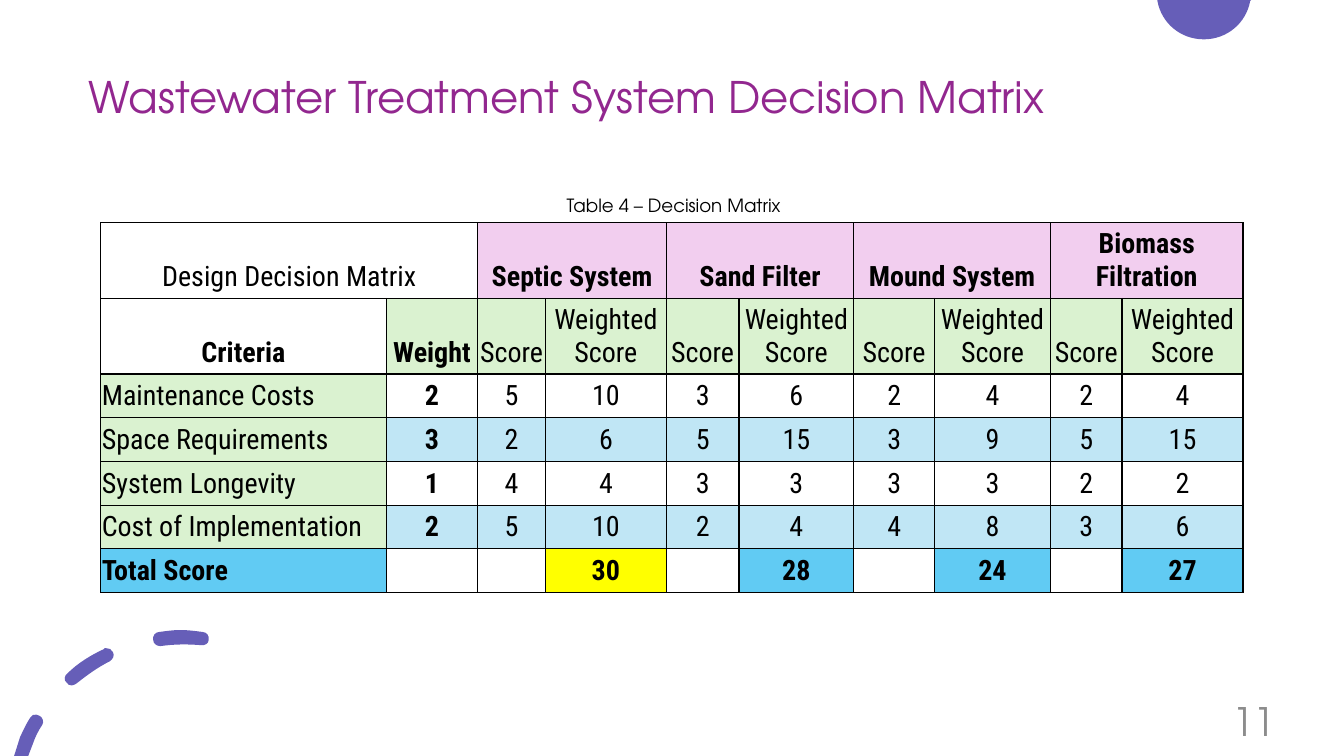
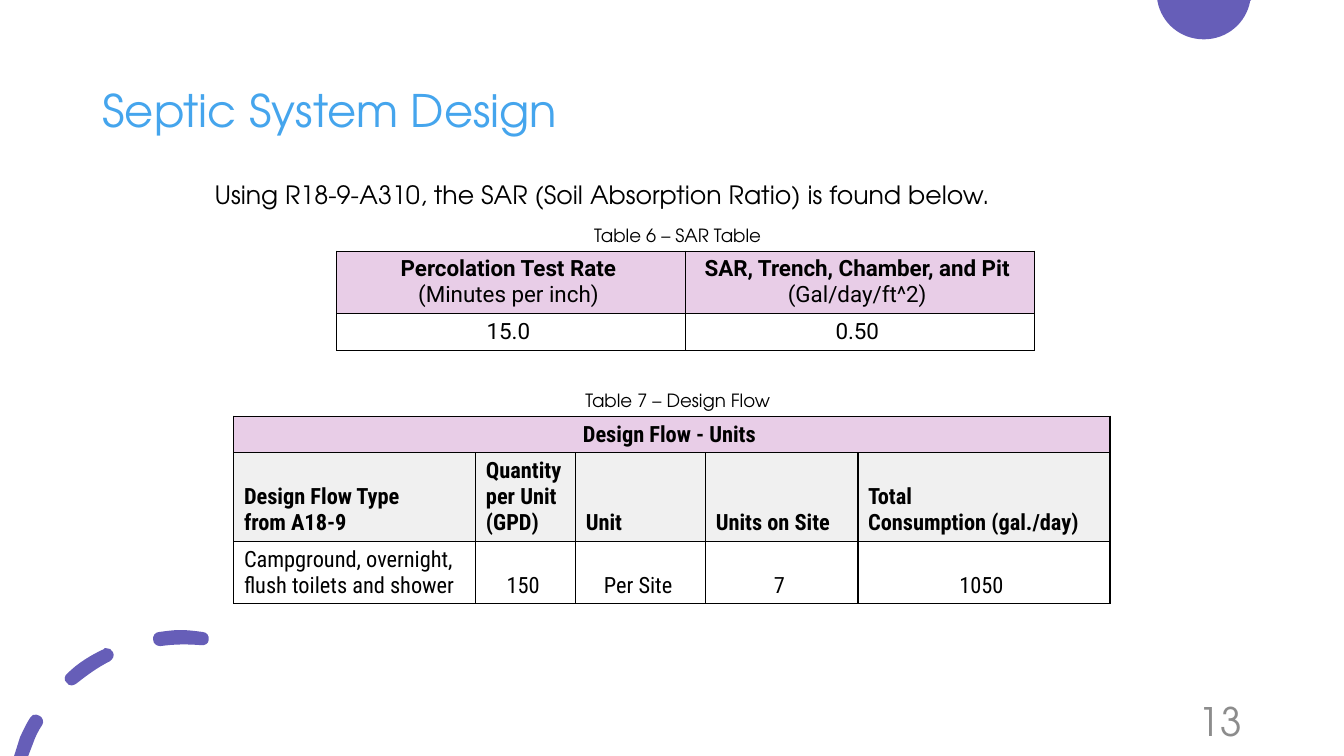
"""Build two slides on the choice and design of a wastewater system."""
from lxml.etree import SubElement
from pptx import Presentation
from pptx.dml.color import RGBColor
from pptx.enum.text import MSO_ANCHOR, PP_ALIGN
from pptx.oxml.ns import qn
from pptx.util import Inches, Pt

BLACK = RGBColor(0, 0, 0)
WHITE = RGBColor(255, 255, 255)
GRAY = RGBColor(0x8C, 0x8C, 0x8C)
INDIGO = RGBColor(0x66, 0x5E, 0xB8)
PLUM = RGBColor(0x92, 0x27, 0x8F)
SKY = RGBColor(0x45, 0xA5, 0xED)
PINK = RGBColor(0xF2, 0xCE, 0xEF)
GREEN = RGBColor(0xDA, 0xF2, 0xD0)
PALE = RGBColor(0xC0, 0xE6, 0xF5)
BLUE = RGBColor(0x61, 0xCB, 0xF3)
YELLOW = RGBColor(255, 255, 0)
LILAC = RGBColor(0xE8, 0xCD, 0xE7)
SILVER = RGBColor(0xF0, 0xF0, 0xF0)
HEAD, BODY, SLIM = "TeX Gyre Adventor", "Roboto", "Roboto Condensed"
LEFT, MID, RIGHT = PP_ALIGN.LEFT, PP_ALIGN.CENTER, PP_ALIGN.RIGHT

DISC = [
    [(11.48, 0), (12.41, 0), (12.4, 0.01),
     (12.36, 0.23, 12.17, 0.39, 11.94, 0.39),
     (11.71, 0.39, 11.52, 0.23, 11.48, 0.01)],
]
DASHES = [
    [(0.36, 7.09), (0.34, 7.08, 0.31, 7.1, 0.3, 7.12),
     (0.26, 7.18, 0.23, 7.25, 0.2, 7.31), (0.14, 7.5), (0.28, 7.5),
     (0.33, 7.37), (0.35, 7.31, 0.38, 7.25, 0.42, 7.19),
     (0.44, 7.16, 0.42, 7.11, 0.39, 7.1),
     (0.38, 7.09, 0.37, 7.09, 0.36, 7.09)],
    [(1.05, 6.43), (1.04, 6.43, 1.03, 6.43, 1.03, 6.44),
     (0.9, 6.5, 0.77, 6.58, 0.67, 6.68),
     (0.64, 6.7, 0.63, 6.75, 0.66, 6.77),
     (0.67, 6.79, 0.69, 6.8, 0.71, 6.8),
     (0.73, 6.8, 0.74, 6.79, 0.76, 6.78),
     (0.86, 6.7, 0.97, 6.62, 1.09, 6.56),
     (1.12, 6.54, 1.14, 6.5, 1.12, 6.47),
     (1.11, 6.44, 1.08, 6.43, 1.05, 6.43)],
    [(1.79, 6.25), (1.72, 6.25, 1.65, 6.26, 1.58, 6.27),
     (1.54, 6.27, 1.51, 6.31, 1.52, 6.35),
     (1.52, 6.38, 1.55, 6.41, 1.59, 6.41),
     (1.73, 6.39, 1.86, 6.39, 1.99, 6.4),
     (2.03, 6.41, 2.07, 6.38, 2.07, 6.35),
     (2.08, 6.31, 2.05, 6.27, 2.01, 6.27),
     (1.94, 6.26, 1.86, 6.25, 1.79, 6.25)],
]

SYSTEMS = ["Septic System", "Sand Filter", "Mound System",
           "Biomass Filtration"]
CRITERIA = [
    ("Maintenance Costs", 2, [5, 3, 2, 2]),
    ("Space Requirements", 3, [2, 5, 3, 5]),
    ("System Longevity", 1, [4, 3, 3, 2]),
    ("Cost of Implementation", 2, [5, 2, 4, 3]),
]
SAR = [
    ["Percolation Test Rate\xa0\n(Minutes per inch)\xa0",
     "SAR, Trench, Chamber, and Pit\xa0\n(Gal/day/ft^2)\xa0"],
    ["15.0\xa0", "0.50\xa0"],
]
FLOW = [
    ["Design Flow - Units\xa0", None, None, None, None],
    ["Design Flow Type from\xa0A18-9\xa0",
     "Quantity per\xa0Unit\xa0\v(GPD)\xa0", "Unit\xa0",
     "Units\xa0on\xa0Site\xa0", "Total Consumption\xa0(gal./day)\xa0"],
    ["Campground,\xa0overnight, flush toilets\xa0and shower\xa0",
     "150\xa0", "Per\xa0Site\xa0", "7\xa0", "1050\xa0"],
]


def bend(line, part, shape):
    """Swap a straight segment for a cubic curve."""
    trail = line.getparent()
    curve = SubElement(trail, qn("a:cubicBezTo"))
    for x, y in zip(part[::2], part[1::2]):
        SubElement(curve, qn("a:pt"), x=str(Inches(x) - shape.left),
                   y=str(Inches(y) - shape.top))
    trail.replace(line, curve)


def outline(slide, loops):
    """Draw closed loops as one indigo shape."""
    pen = None
    for loop in loops:
        ends = [(Inches(part[-2]), Inches(part[-1])) for part in loop]
        if pen is None:
            pen = slide.shapes.build_freeform(*ends[0])
        else:
            pen.move_to(*ends[0])
        pen.add_line_segments(ends[1:], close=True)
    shape = pen.convert_to_shape()
    lines = list(shape._element.iter(qn("a:lnTo")))
    parts = [part for loop in loops for part in loop[1:]]
    for line, part in zip(lines, parts):
        if len(part) == 6:
            bend(line, part, shape)
    shape.shadow.inherit = False
    shape.fill.solid()
    shape.fill.fore_color.rgb = INDIGO
    shape.line.fill.background()


def style(para, face, size, color, align=LEFT, bold=False):
    """Set the look of a paragraph."""
    para.alignment = align
    font = para.font
    font.name, font.size, font.bold = face, Pt(size), bold
    font.color.rgb = color


def label(slide, box, text, size, color=BLACK, align=LEFT,
          anchor=MSO_ANCHOR.TOP):
    """Add a line of text and return its paragraph."""
    frame = slide.shapes.add_textbox(*map(Inches, box)).text_frame
    frame.word_wrap = True
    frame.vertical_anchor = anchor
    frame.text = text
    style(frame.paragraphs[0], HEAD, size, color, align)
    return frame.paragraphs[0]


def caption(slide, x, y, text):
    """Add the caption above a table."""
    label(slide, (x, y, 6.5, 0.32), text, 13, align=MID)


def page(title, x, y, size, color, number, edge):
    """Add a slide with the shared art, title and number."""
    slide = deck.slides.add_slide(deck.slide_layouts[6])
    outline(slide, DISC)
    outline(slide, DASHES)
    para = label(slide, (x, y, 11.5, 1.45), title, size, color,
                 anchor=MSO_ANCHOR.MIDDLE)
    para.line_spacing = 0.9
    label(slide, (edge - 3, 6.95, 3, 0.4), number, 28, GRAY, RIGHT,
          MSO_ANCHOR.MIDDLE)
    return slide


def border(cell, width):
    """Rule all four sides of a cell in black."""
    props = cell._tc.get_or_add_tcPr()
    for side in ("lnL", "lnR", "lnT", "lnB"):
        line = SubElement(props, qn("a:" + side), w=str(Pt(width)))
        fill = SubElement(line, qn("a:solidFill"))
        SubElement(fill, qn("a:srgbClr"), val=str(BLACK))


def grid(slide, x, y, widths, heights, rows, look, face, size, rule,
         inset, anchor=MSO_ANCHOR.BOTTOM):
    """Add a table; look gives fill, bold and alignment of a cell."""
    table = slide.shapes.add_table(
        len(rows), len(widths), Inches(x), Inches(y),
        Inches(sum(widths)), Inches(sum(heights))).table
    table.first_row = table.horz_banding = False
    for col, width in zip(table.columns, widths):
        col.width = Inches(width)
    for row, height in zip(table.rows, heights):
        row.height = Inches(height)
    for r, row in enumerate(rows):
        for c, text in enumerate(row):
            cell = table.cell(r, c)
            color, bold, align = look(r, c)
            border(cell, rule)
            if color is None:
                cell.fill.background()
            else:
                cell.fill.solid()
                cell.fill.fore_color.rgb = color
            cell.vertical_anchor = anchor
            (cell.margin_left, cell.margin_right, cell.margin_top,
             cell.margin_bottom) = map(Inches, inset)
            if text:
                cell.text = text
            for i, para in enumerate(cell.text_frame.paragraphs):
                style(para, face, size, BLACK, align, bold and i == 0)
        for c, text in enumerate(row):
            if text is not None:
                end = c + 1
                while end < len(row) and row[end] is None:
                    end += 1
                if end > c + 1:
                    table.cell(r, c).merge(table.cell(r, end - 1))


def matrix():
    """Return the rows of the decision matrix with weighted scores."""
    top, names = ["Design Decision Matrix", None], ["Criteria", "Weight"]
    total = ["Total Score", ""]
    for i, system in enumerate(SYSTEMS):
        top += [system, None]
        names += ["Score", "Weighted Score"]
        total += ["", str(sum(w * marks[i] for _, w, marks in CRITERIA))]
    body = [[name, str(w)] + [str(v) for m in marks for v in (m, w * m)]
            for name, w, marks in CRITERIA]
    return [top, names, *body, total]


def score_look(r, c):
    """Style a cell of the decision matrix."""
    last = len(CRITERIA) + 2
    bold = r == last or (c > 1 if r == 0 else c == 1 or (r, c) == (1, 0))
    align = LEFT if c == 0 and r > 1 else MID
    if r == 0:
        color = PINK if c > 1 else None
    elif r == 1:
        color = GREEN if c else None
    elif r == last:
        sums = c == 0 or c % 2 and c > 1
        color = YELLOW if c == 3 else BLUE if sums else WHITE
    else:
        color = GREEN if c == 0 else PALE if r % 2 else None
    return color, bold, align


def sar_look(r, c):
    """Style a cell of the absorption table."""
    return (None if r else LILAC), r == 0, MID


def flow_look(r, c):
    """Style a cell of the flow table."""
    align = LEFT if r == 1 or (r, c) == (2, 0) else MID
    return (LILAC, SILVER, None)[r], r < 2, align


deck = Presentation()
deck.slide_width, deck.slide_height = Inches(13.33), Inches(7.5)

slide = page("Wastewater Treatment System\xa0Decision Matrix",
             0.78, 0.26, 31, PLUM, "11", 12.75)
grid(slide, 1, 2.21,
     [2.83, 0.91, 0.67, 1.2, 0.72, 1.14, 0.8, 1.15, 0.71, 1.2],
     [0.75] * 2 + [2.17 / 5] * 5, matrix(), score_look, SLIM, 20, 1,
     (0.01, 0.01, 0.01, 0.05))
caption(slide, 3.43, 1.88, "Table 4\xa0\u2013 Decision Matrix")

slide = page("Septic System\xa0Design", 0.92, 0.4, 32, SKY, "13", 12.42)
grid(slide, 3.34, 2.49, [3.46] * 2, [0.62, 0.37], SAR, sar_look, BODY, 16,
     0.75, (0.1, 0.1, 0.05, 0.03), MSO_ANCHOR.TOP)
grid(slide, 2.32, 4.13, [2.4, 0.99, 1.29, 1.51, 2.5], [0.36, 0.88, 0.62],
     FLOW, flow_look, SLIM, 16, 0.91, (0.1, 0.1, 0.03, 0.05))
label(slide, (2.03, 1.73, 8.41, 0.4),
      "Using R18-9-A310, the SAR (Soil Absorption Ratio) is found below.\xa0",
      18)
caption(slide, 3.47, 2.18, "Table 6\xa0\u2013 SAR\xa0Table")
caption(slide, 3.47, 3.81, "Table 7\xa0\u2013 Design Flow")

deck.save("out.pptx")
